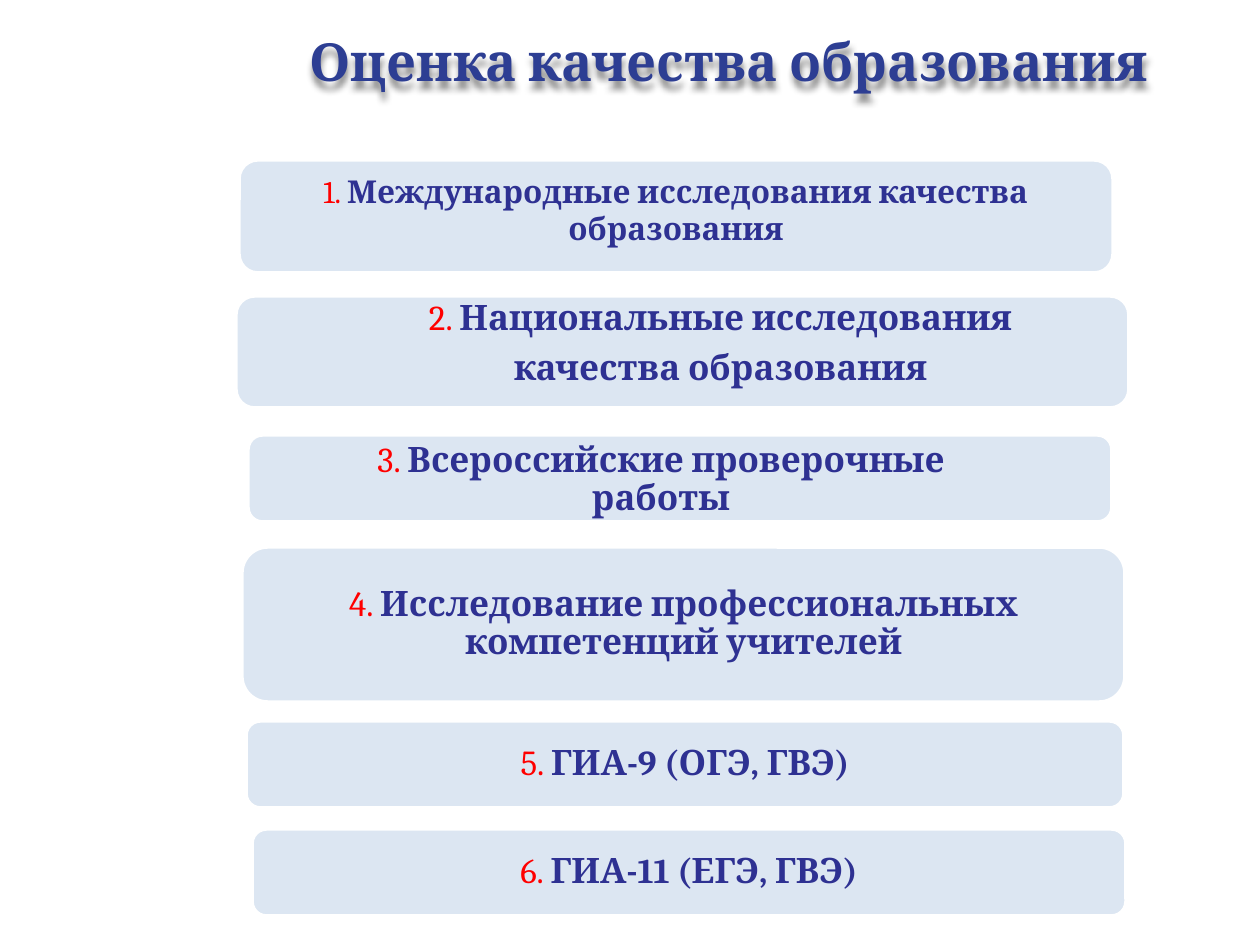
from lxml import etree
from pptx import Presentation
from pptx.dml.color import RGBColor
from pptx.enum.shapes import MSO_SHAPE as SHAPE
from pptx.enum.text import MSO_ANCHOR as ANCHOR, PP_ALIGN as ALIGN
from pptx.oxml import parse_xml
from pptx.util import Emu, Pt

FONT = "Cambria"
PX = 914400 / 126
NS = "http://schemas.openxmlformats.org/drawingml/2006/main"

# number, lines, box, text area relative to the box (None: inset by PAD)
PAD = 4
CARDS = [
    ("2. ", ["Национальные исследования", "качества образования"],
     (236, 296, 893, 112), (-21, -8, 1011, 112)),
    ("3. ", ["Всероссийские проверочные работы"],
     (248, 435, 864, 87), (48, 6, 730, 78)),
    ("4. ", ["Исследование профессиональных компетенций учителей"],
     (242, 547, 883, 155), None),
    ("5. ", ["ГИА-9 (ОГЭ, ГВЭ)"], (246, 721, 878, 87), None),
    ("6. ", ["ГИА-11 (ЕГЭ, ГВЭ)"], (252, 829, 874, 87), None),
]


def px(*values):
    return [Emu(round(v * PX)) for v in values]


def rgb(value):
    return RGBColor.from_string(value)


def add_run(p, text, color, bold=False):
    r = p.add_run()
    r.text = text
    r.font.bold = bold
    r.font.color.rgb = rgb(color)


def add_title(s, box, text):
    sp = s.shapes.add_textbox(*px(*box))
    tf = sp.text_frame
    tf.word_wrap = True
    p = tf.paragraphs[0]
    p.text = text
    p.alignment = ALIGN.CENTER
    p.font.name, p.font.size, p.font.bold = FONT, Pt(30), True
    p.font.color.rgb = rgb("2D3E93")
    # Soft shadow under the letters
    sp._element.spPr.append(parse_xml(
        f'<a:effectLst xmlns:a="{NS}"><a:outerShdw blurRad="50800" dist="50000" '
        'dir="5400000" algn="t" rotWithShape="0"><a:srgbClr val="000000">'
        '<a:alpha val="45000"/></a:srgbClr></a:outerShdw></a:effectLst>'))


def add_panel(s, box):
    sp = s.shapes.add_shape(SHAPE.ROUNDED_RECTANGLE, *px(*box))
    sp.shadow.inherit = False
    sp.fill.solid()
    sp.fill.fore_color.rgb = rgb("DCE6F2")
    sp.line.color.rgb = rgb("FFFFFF")
    sp.line.width = Pt(2)
    return sp


def write_label(tf, number, lines, size):
    tf.word_wrap = True
    for i, line in enumerate(lines):
        p = tf.add_paragraph() if i else tf.paragraphs[0]
        p.alignment = ALIGN.CENTER
        p.font.name, p.font.size = FONT, Pt(size)
        if i == 0:
            add_run(p, number, "FF0000")
        add_run(p, line, "2E3192", bold=True)


def add_card(s, box, number, lines, area):
    add_panel(s, box)
    x, y, w, h = box
    dx, dy, tw, th = area or (PAD, PAD, w - 2 * PAD, h - 2 * PAD)
    tf = s.shapes.add_textbox(*px(x + dx, y + dy, tw, th)).text_frame
    tf.vertical_anchor = ANCHOR.MIDDLE
    tf.margin_left = tf.margin_right = px(28)[0]
    tf.margin_top = tf.margin_bottom = 0
    write_label(tf, number, lines, 20)
    for p in tf.paragraphs:
        p.line_spacing = 0.9
        p.space_after = Pt(7)


def add_first_card(s, box, number, lines):
    tf = add_panel(s, box).text_frame
    tf.vertical_anchor = ANCHOR.TOP
    write_label(tf, number, lines, 18)


def main():
    prs = Presentation()
    prs.slide_width, prs.slide_height = px(1260, 945)
    s = prs.slides.add_slide(prs.slide_layouts[6])

    # Heading
    add_title(s, (213, 23, 1032, 77), "Оценка качества образования")

    # Numbered cards
    add_first_card(s, (239, 160, 874, 113), "1. ",
                   ["Международные исследования качества образования"])
    for number, lines, box, area in CARDS:
        add_card(s, box, number, lines, area)

    prs.save("out.pptx")


if __name__ == "__main__":
    main()
